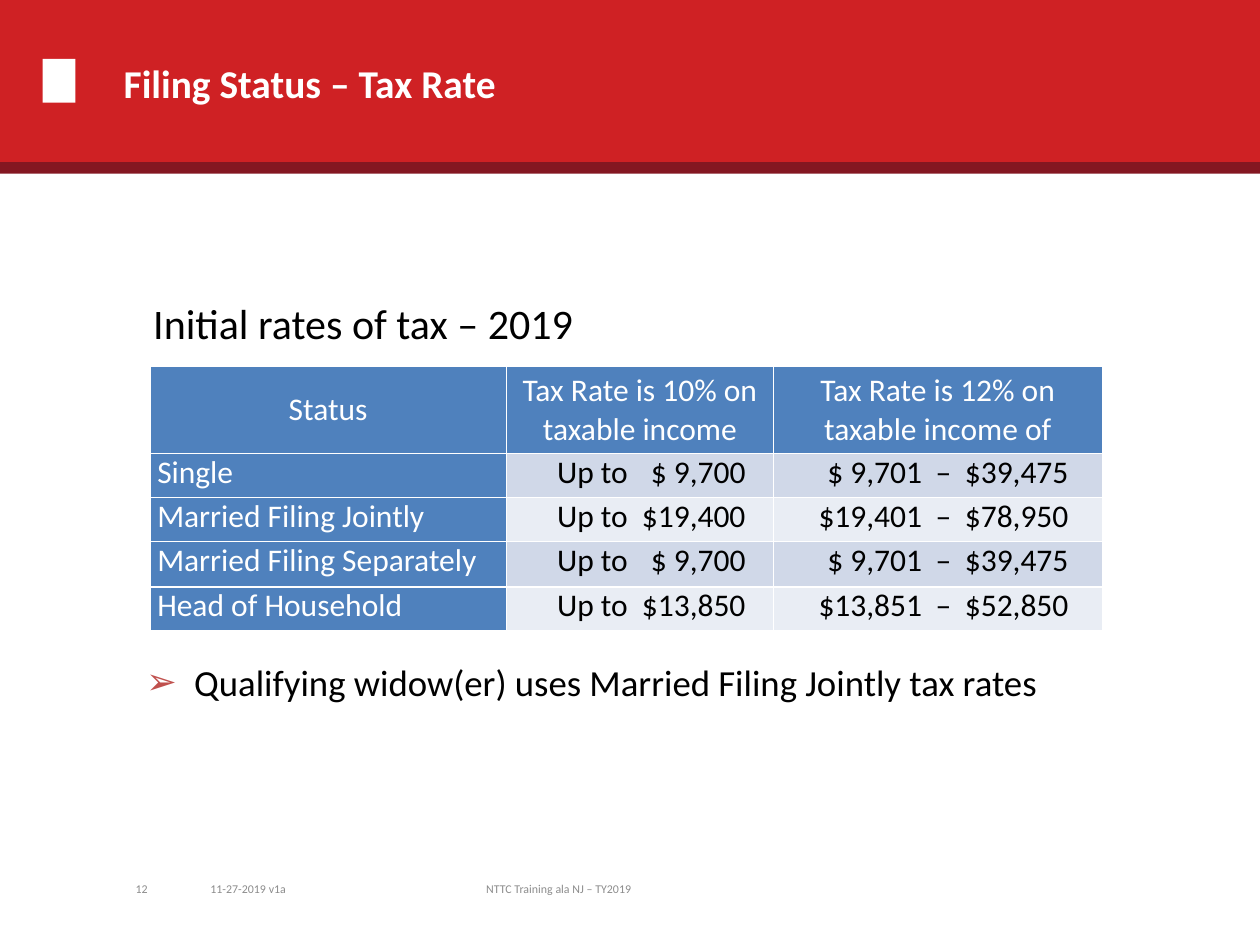
import pptx
import pptx.util
import pptx.dml.color
import pptx.enum.shapes
import pptx.enum.text
import pptx.oxml.ns
from lxml import etree

Cm, Pt = pptx.util.Cm, pptx.util.Pt
ALIGN = pptx.enum.text.PP_ALIGN
ANCHOR = pptx.enum.text.MSO_ANCHOR

COLORS = {
    "red": "CF2124", "dark red": "841721", "white": "FFFFFF", "black": "000000",
    "grey": "8C8C8C", "blue": "4F81BD", "band": "D0D8E8", "light band": "E9EDF4",
    "bullet": "C0504D",
}
FORMATS = {
    "title": {"size": Pt(22.5), "bold": True, "color": "white"},
    "heading": {"size": Pt(24), "bold": False, "color": "black"},
    "list": {"size": Pt(21), "bold": False, "color": "black"},
    "label": {"size": Pt(18), "bold": False, "color": "white"},
    "amount": {"size": Pt(18), "bold": False, "color": "black"},
    "footer": {"size": Pt(6.8), "bold": False, "color": "grey"},
}
CELL_MARGINS = {"margin_left": Cm(0.15), "margin_right": Cm(0.15),
                "margin_top": 0, "margin_bottom": 0}

COLUMN_WIDTHS = [7.19, 5.38, 6.63]
ROW_HEIGHTS = [1.75, 0.89, 0.89, 0.91, 0.89]
RATES = [
    ["Status", "Tax Rate is 10% on taxable income", "Tax Rate is 12% on taxable income of"],
    ["Single", "Up to\t$ 9,700", "\t$ 9,701\t–\t$39,475"],
    ["Married Filing Jointly", "Up to\t$19,400", "\t$19,401\t–\t$78,950"],
    ["Married Filing Separately", "Up to\t$ 9,700", "\t$ 9,701\t–\t$39,475"],
    ["Head of Household", "Up to\t$13,850", "\t$13,851\t–\t$52,850"],
]
# Left margin and tab stops that line up the amounts, by column
AMOUNT_STOPS = {
    1: (1.02, [("r", 3.8)]),
    2: (0.9, [("r", 2.1), ("ctr", 2.53), ("r", 5.05)]),
}


def rgb(name):
    return pptx.dml.color.RGBColor.from_string(COLORS[name])


def set_attributes(target, values):
    for name, value in values.items():
        setattr(target, name, value)


def add_element(parent, tag, **attributes):
    values = {name: str(value) for name, value in attributes.items()}
    return etree.SubElement(parent, pptx.oxml.ns.qn(tag), values)


def write(frame, text, style, align=ALIGN.LEFT, anchor=ANCHOR.TOP):
    """Fill a text frame with one paragraph and return the paragraph."""
    frame.word_wrap = True
    frame.vertical_anchor = anchor
    paragraph = frame.paragraphs[0]
    set_attributes(paragraph, {"alignment": align, "space_before": Pt(0)})
    run = paragraph.add_run()
    run.text = text
    values = dict(FORMATS[style], name="Calibri")
    run.font.color.rgb = rgb(values.pop("color"))
    set_attributes(run.font, values)
    return paragraph


def place(shape, left, top, width, height):
    set_attributes(shape, {"left": Cm(left), "top": Cm(top),
                           "width": Cm(width), "height": Cm(height)})


def add_label(slide, box, text, style, **layout):
    label = slide.shapes.add_textbox(*map(Cm, box))
    write(label.text_frame, text, style, **layout)


def build_banner(slide, left, top, width, height):
    title = slide.shapes.title
    bars = [
        ("red", left, top, width, height - 0.12),
        ("white", left + 0.86, top + 1.21, 0.66, 0.88),
        ("dark red", left, top + height - 0.23, width, 0.23),
    ]
    for color, *box in bars:
        bar = slide.shapes.add_shape(pptx.enum.shapes.MSO_SHAPE.RECTANGLE, *map(Cm, box))
        bar.shadow.inherit = False
        bar.fill.solid()
        bar.fill.fore_color.rgb = rgb(color)
        bar.line.fill.background()
        title.element.addprevious(bar.element)  # keeps the title in front
    place(title, left + 2.24, top + 0.1, 20.32, 3.18)
    title.text_frame.auto_size = pptx.enum.text.MSO_AUTO_SIZE.NONE
    write(title.text_frame, "Filing Status – Tax Rate", "title", anchor=ANCHOR.MIDDLE)


def add_borders(cell):
    properties = cell.fill._xPr
    for position, side in enumerate(("a:lnL", "a:lnR", "a:lnT", "a:lnB")):
        line = add_element(properties, side, w=Pt(1))
        add_element(add_element(line, "a:solidFill"), "a:srgbClr", val=COLORS["white"])
        properties.insert(position, line)  # borders come before the fill


def build_rates(slide, left, top, width, height):
    # Heading over the table
    add_label(slide, (left - 0.18, top - 1.52, 10.95, 1.27),
              "Initial rates of tax – 2019", "heading")

    # Rate table
    table = slide.shapes.add_table(len(RATES), len(COLUMN_WIDTHS),
                                   *map(Cm, (left, top, width, height))).table
    for column, column_width in zip(table.columns, COLUMN_WIDTHS):
        column.width = Cm(column_width)
    for row, row_height in zip(table.rows, ROW_HEIGHTS):
        row.height = Cm(row_height)
    for r, texts in enumerate(RATES):
        for c, text in enumerate(texts):
            cell = table.cell(r, c)
            set_attributes(cell, CELL_MARGINS)
            is_header, is_label = r == 0, r == 0 or c == 0
            band = "band" if r % 2 else "light band"
            cell.fill.solid()
            cell.fill.fore_color.rgb = rgb("blue" if is_label else band)
            add_borders(cell)
            paragraph = write(cell.text_frame, text, "label" if is_label else "amount",
                              align=ALIGN.CENTER if is_header else ALIGN.LEFT)
            cell.vertical_anchor = ANCHOR.MIDDLE if is_header else ANCHOR.TOP
            if not is_label:
                margin, stops = AMOUNT_STOPS[c]
                cell.margin_left = Cm(margin)
                tabs = add_element(paragraph._p.get_or_add_pPr(), "a:tabLst")
                for kind, position in stops:
                    add_element(tabs, "a:tab", pos=Cm(position), algn=kind)


def build_note(slide, left, top, width, height):
    note = slide.placeholders[1]
    place(note, left, top, width, height)
    note.text_frame.auto_size = pptx.enum.text.MSO_AUTO_SIZE.NONE
    paragraph = write(note.text_frame,
                      "Qualifying widow(er) uses Married Filing Jointly tax rates", "list")
    properties = paragraph._p.get_or_add_pPr()
    set_attributes(paragraph, {"level": 0})
    properties.set("marL", str(Cm(0.97)))
    properties.set("indent", str(-Cm(0.97)))
    add_element(add_element(properties, "a:buClr"), "a:srgbClr", val=COLORS["bullet"])
    add_element(properties, "a:buChar", char="➢")


def build_footer(slide, left, top, width, height):
    parts = [
        (0, 1.96, "12", ALIGN.RIGHT),
        (2.72, 2.77, "11-27-2019 v1a", ALIGN.LEFT),
        (width - 8.05, 8.05, "NTTC Training ala NJ – TY2019", ALIGN.CENTER),
    ]
    for offset, part_width, text, align in parts:
        add_label(slide, (left + offset, top, part_width, height), text, "footer",
                  align=align, anchor=ANCHOR.MIDDLE)


def main():
    deck = pptx.Presentation()
    set_attributes(deck, {"slide_width": Cm(25.4), "slide_height": Cm(19.05)})
    slide = deck.slides.add_slide(deck.slide_layouts[1])
    build_banner(slide, 0, -0.02, 25.4, 3.52)
    build_rates(slide, 3.02, 7.39, sum(COLUMN_WIDTHS), sum(ROW_HEIGHTS))
    build_note(slide, 2.69, 13.18, 19.53, 1.73)
    build_footer(slide, 1.27, 17.4, 14.02, 1.02)
    deck.save("out.pptx")


if __name__ == "__main__":
    main()
